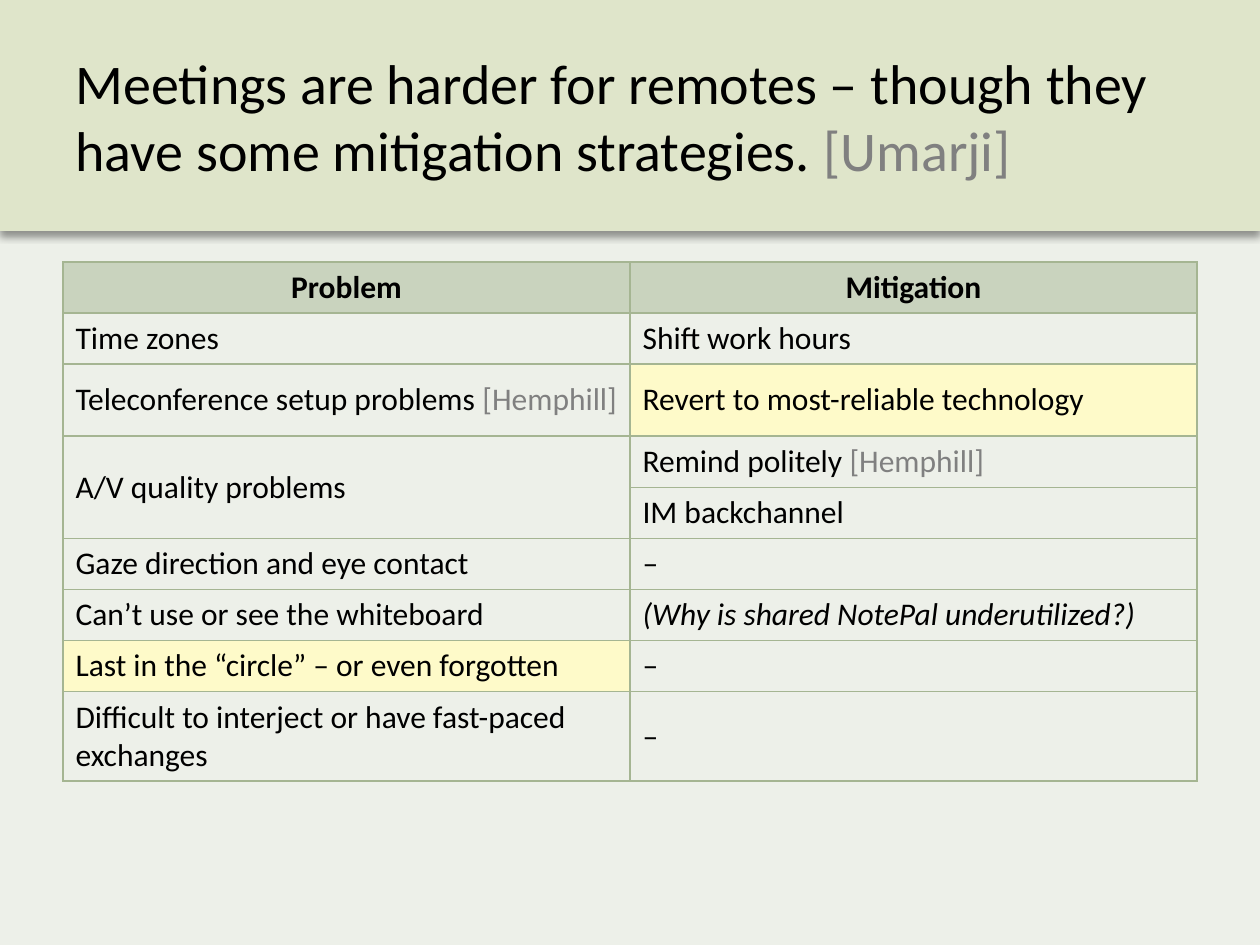
"""Build a slide on remote meeting problems and their mitigations."""
from dataclasses import dataclass

from lxml import etree
from pptx import Presentation
from pptx import util as u
from pptx.dml import color
from pptx.enum import shapes, text
from pptx.oxml import ns

FONT = "Calibri"
COLORS = {
    "background": "EDF0E9",
    "banner": "DFE5CA",
    "header": "C9D3BE",
    "highlight": "FEFAC9",
    "border": "A5B592",
    "text": "000000",
    "citation": "808080",
}


@dataclass
class Entry:
    wording: str
    citation: str = ""
    fill: str = ""
    bold: bool = False
    italic: bool = False
    centered: bool = False
    rows: int = 1


@dataclass
class Row:
    height: int
    problem: Entry | None
    mitigation: Entry


def heading(wording: str) -> Entry:
    return Entry(wording, fill="header", bold=True, centered=True)


ROWS = [
    Row(51, heading("Problem"), heading("Mitigation")),
    Row(51, Entry("Time zones"), Entry("Shift work hours")),
    Row(72, Entry("Teleconference setup problems ", "[Hemphill]"),
        Entry("Revert to most-reliable technology", fill="highlight")),
    Row(51, Entry("A/V quality problems", rows=2), Entry("Remind politely ", "[Hemphill]")),
    Row(51, None, Entry("IM backchannel")),
    Row(51, Entry("Gaze direction and eye contact"), Entry("–")),
    Row(51, Entry("Can’t use or see the whiteboard"),
        Entry("(Why is shared NotePal underutilized?)", italic=True)),
    Row(51, Entry("Last in the “circle” – or even forgotten", fill="highlight"), Entry("–")),
    Row(89, Entry("Difficult to interject or have fast-paced exchanges"), Entry("–")),
]


def px(length: int) -> u.Emu:
    return u.Emu(round(length * 914400 / 126))


def rgb(name: str) -> color.RGBColor:
    return color.RGBColor.from_string(COLORS[name])


def write(frame, entry: Entry, size: int) -> None:
    paragraph = frame.paragraphs[0]
    paragraph.alignment = text.PP_ALIGN.CENTER if entry.centered else text.PP_ALIGN.LEFT
    for wording, tint in ((entry.wording, "text"), (entry.citation, "citation")):
        if wording:
            run = paragraph.add_run()
            run.text = wording
            run.font.name = FONT
            run.font.size = u.Pt(size)
            run.font.bold = entry.bold
            run.font.italic = entry.italic
            run.font.color.rgb = rgb(tint)


def add_banner(slide, title: Entry) -> None:
    banner = slide.shapes.add_shape(shapes.MSO_SHAPE.RECTANGLE, 0, 0, px(1260), px(231))
    banner.fill.solid()
    banner.fill.fore_color.rgb = rgb("banner")
    banner.line.fill.background()
    banner.shadow.inherit = False
    effects = banner._element.spPr.find(ns.qn("a:effectLst"))
    shadow = etree.SubElement(
        effects, ns.qn("a:outerShdw"), blurRad=str(u.Pt(4)), dist=str(u.Pt(3)),
        dir="5400000", rotWithShape="0")
    shade = etree.SubElement(shadow, ns.qn("a:srgbClr"), val=COLORS["text"])
    etree.SubElement(shade, ns.qn("a:alpha"), val="40000")
    frame = banner.text_frame
    frame.word_wrap = True
    frame.vertical_anchor = text.MSO_ANCHOR.MIDDLE
    frame.margin_left = frame.margin_right = u.Inches(0.6)
    frame.margin_top = frame.margin_bottom = u.Inches(0.1)
    write(frame, title, 32)


def style_cell(cell, fill: str) -> None:
    properties = cell._tc.get_or_add_tcPr()
    for side in ("lnL", "lnR", "lnT", "lnB"):
        edge = etree.SubElement(properties, ns.qn(f"a:{side}"), w=str(u.Pt(1)))
        paint = etree.SubElement(edge, ns.qn("a:solidFill"))
        etree.SubElement(paint, ns.qn("a:srgbClr"), val=COLORS["border"])
    if fill:
        cell.fill.solid()
        cell.fill.fore_color.rgb = rgb(fill)
    else:
        cell.fill.background()
    cell.vertical_anchor = text.MSO_ANCHOR.MIDDLE


def add_strategies(slide, rows: list[Row]) -> None:
    height = sum(row.height for row in rows)
    strategies = slide.shapes.add_table(
        len(rows), 2, px(63), px(262), px(1134), px(height)).table
    strategies.first_row = strategies.horz_banding = False
    for index, row in enumerate(rows):
        strategies.rows[index].height = px(row.height)
        for column, entry in enumerate((row.problem, row.mitigation)):
            cell = strategies.cell(index, column)
            style_cell(cell, entry.fill if entry else "")
            if entry:
                write(cell.text_frame, entry, 18)
                if entry.rows > 1:
                    cell.merge(strategies.cell(index + entry.rows - 1, column))


def main() -> None:
    deck = Presentation()
    deck.slide_width, deck.slide_height = px(1260), px(945)
    slide = deck.slides.add_slide(deck.slide_layouts[6])
    slide.background.fill.solid()
    slide.background.fill.fore_color.rgb = rgb("background")
    add_banner(slide, Entry(
        "Meetings are harder for remotes – though they have some mitigation strategies. ",
        "[Umarji]"))
    add_strategies(slide, ROWS)
    deck.save("out.pptx")


if __name__ == "__main__":
    main()
